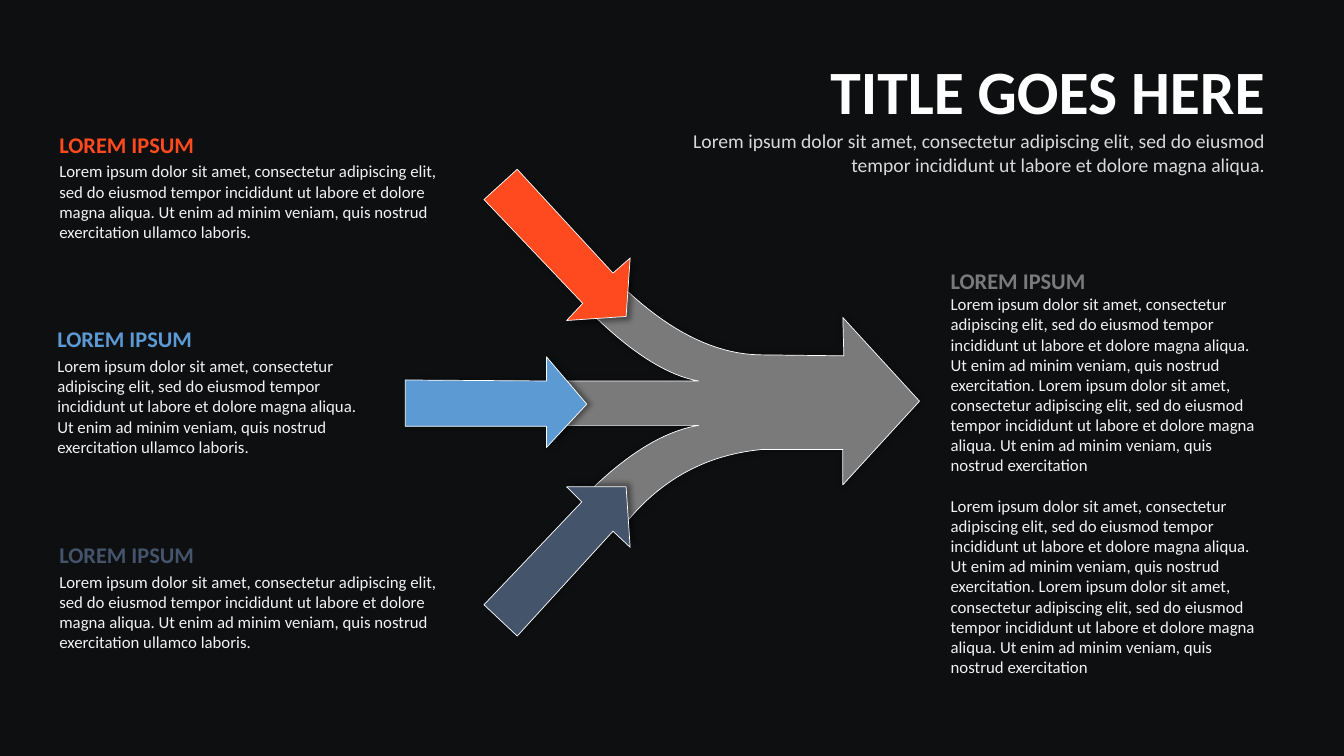
from lxml import etree
from pptx import Presentation
from pptx.dml.color import RGBColor
from pptx.enum.text import MSO_ANCHOR, MSO_AUTO_SIZE, PP_ALIGN
from pptx.oxml import parse_xml
from pptx.oxml.ns import nsdecls
from pptx.util import Inches, Pt


def curve(start, control, end, steps=20):
    points = []
    for step in range(steps + 1):
        t = step / steps
        points.append(tuple(
            (1 - t) ** 2 * a + 2 * t * (1 - t) * b + t ** 2 * c
            for a, b, c in zip(start, control, end)
        ))
    return points


def write_text(shape, box, paragraphs, alignment=PP_ALIGN.LEFT):
    shape.left, shape.top, shape.width, shape.height = map(Inches, box)
    frame = shape.text_frame
    frame.word_wrap = True
    frame.auto_size = MSO_AUTO_SIZE.SHAPE_TO_FIT_TEXT
    frame.vertical_anchor = MSO_ANCHOR.TOP
    for index, (text, size, color, bold, space_before) in enumerate(paragraphs):
        paragraph = frame.add_paragraph() if index else frame.paragraphs[0]
        paragraph.alignment = alignment
        paragraph.space_before = Pt(space_before)
        run = paragraph.add_run()
        run.text = text
        run.font.name = "Calibri"
        run.font.size = Pt(size)
        run.font.bold = bold
        run.font.color.rgb = RGBColor.from_string(color)


ORANGE, BLUE, NAVY, GRAY = "FE4A1E", "5C9AD3", "44546B", "7A7A7A"
WHITE, BODY_COLOR = "FFFFFF", "F2F2F2"

presentation = Presentation()
presentation.slide_width = Inches(13.33)
presentation.slide_height = Inches(7.5)
slide = presentation.slides.add_slide(presentation.slide_layouts[5])
slide.background.fill.solid()
slide.background.fill.fore_color.rgb = RGBColor.from_string("0E0F11")

merged_arrow = [
    *curve((6.15, 2.82), (6.85, 3.5), (7.52, 3.52)),
    (8.37, 3.53), (8.36, 3.15), (9.12, 3.98), (8.36, 4.81), (8.36, 4.46),
    *curve((7.55, 4.46), (6.72, 4.54), (6.19, 5.21)),
    *curve((5.87, 4.85), (6.44, 4.3), (6.93, 4.22)),
    (5.62, 4.22), (5.62, 3.78),
    *curve((6.93, 3.78), (6.48, 3.7), (5.91, 3.15)),
]
orange_arrow = [(5.13, 1.68), (6.08, 2.71), (6.25, 2.56), (6.21, 3.14),
                (5.62, 3.18), (5.78, 3.01), (4.8, 1.98)]
blue_arrow = [(5.42, 3.54), (5.82, 4.01), (5.42, 4.44), (5.42, 4.23),
              (4.02, 4.23), (4.02, 3.77), (5.42, 3.78)]
navy_arrow = [(5.62, 4.83), (6.21, 4.83), (6.25, 5.43), (6.08, 5.27),
              (5.13, 6.31), (4.8, 6), (5.77, 4.98)]

arrows = [
    (merged_arrow, GRAY, 5, 0, 0),
    (orange_arrow, ORANGE, 4, 3, 45),
    (blue_arrow, BLUE, 4, 3, 0),
    (navy_arrow, NAVY, 4, 3, 315),
]
for points, color, blur, distance, angle in arrows:
    outline = [(Inches(x), Inches(y)) for x, y in points]
    builder = slide.shapes.build_freeform(*outline[0])
    builder.add_line_segments(outline[1:], close=True)
    arrow = builder.convert_to_shape()
    arrow.fill.solid()
    arrow.fill.fore_color.rgb = RGBColor.from_string(color)
    arrow.line.color.rgb = RGBColor.from_string(WHITE)
    arrow.line.width = Pt(0.5)
    arrow.shadow.inherit = False
    effects = arrow.element.spPr.find("{*}effectLst")
    effects.append(parse_xml(
        f'<a:outerShdw {nsdecls("a")} blurRad="{Pt(blur)}" dist="{Pt(distance)}" '
        f'dir="{angle * 60000}" algn="ctr" rotWithShape="0">'
        '<a:srgbClr val="000000"><a:alpha val="40000"/></a:srgbClr></a:outerShdw>'
    ))

sentence = ("Lorem ipsum dolor sit amet, consectetur adipiscing elit, sed do eiusmod "
            "tempor incididunt ut labore et dolore magna aliqua.")
exercitation = f"{sentence} Ut enim ad minim veniam, quis nostrud exercitation"
input_text = f"{exercitation} ullamco laboris."
result_text = f"{exercitation}. {exercitation}"

inputs = [
    ((0.49, 1.25, 4.02, 1.22), ORANGE),
    ((0.47, 3.18, 3.33, 1.42), BLUE),
    ((0.49, 5.32, 4.02, 1.22), NAVY),
]
for box, color in inputs:
    write_text(slide.shapes.add_textbox(0, 0, 0, 0), box, [
        ("LOREM IPSUM", 16, color, True, 0),
        (input_text, 12, BODY_COLOR, False, 2.4),
    ])

write_text(slide.shapes.add_textbox(0, 0, 0, 0), (9.33, 2.6, 3.32, 4.41), [
    ("LOREM IPSUM", 16, GRAY, True, 0),
    (result_text, 12, BODY_COLOR, False, 0),
    (result_text, 12, BODY_COLOR, False, 14.4),
])
write_text(slide.shapes.title, (6.63, 0.47, 6.02, 0.84),
           [("TITLE GOES HERE", 44, WHITE, True, 0)], PP_ALIGN.RIGHT)
write_text(slide.shapes.add_textbox(0, 0, 0, 0), (6.29, 1.23, 6.36, 0.57),
           [(sentence, 14, "D9D9D9", False, 0)], PP_ALIGN.RIGHT)

presentation.save("out.pptx")
